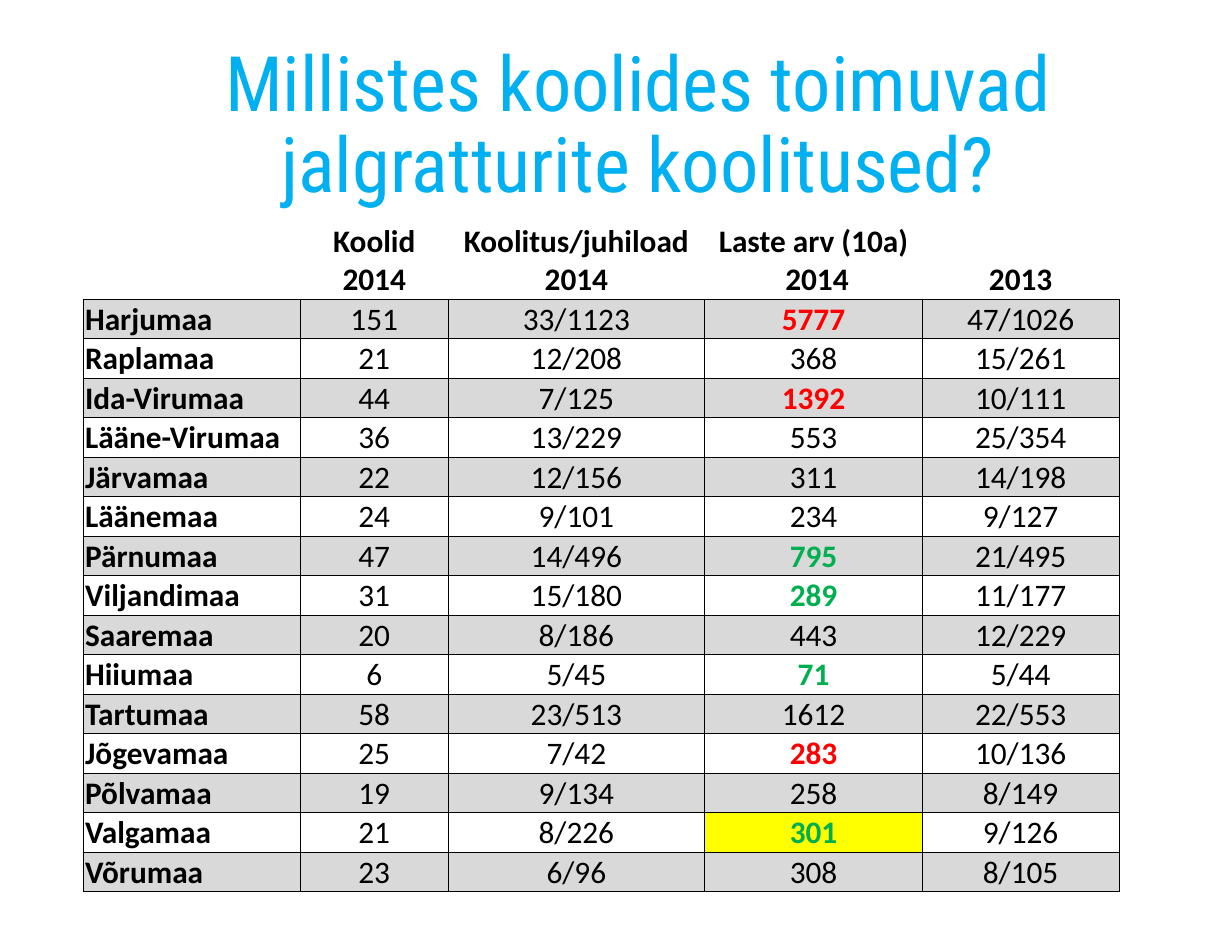
from lxml.etree import SubElement
from pptx import Presentation
from pptx.dml.color import RGBColor
from pptx.enum.text import MSO_ANCHOR, PP_ALIGN
from pptx.oxml.ns import qn
from pptx.util import Inches, Pt

BLUE = RGBColor(0x00, 0xB0, 0xF0)
BLACK = RGBColor(0x00, 0x00, 0x00)
WHITE = RGBColor(0xFF, 0xFF, 0xFF)
GREY = RGBColor(0xD9, 0xD9, 0xD9)
RED = RGBColor(0xFF, 0x00, 0x00)
GREEN = RGBColor(0x00, 0xB0, 0x50)
YELLOW = RGBColor(0xFF, 0xFF, 0x00)

# The page is 25 by 19 cm
PAGE_W, PAGE_H = 25 / 2.54, 19 / 2.54

TITLE = "Millistes koolides toimuvad jalgratturite koolitused?"
HEADS = ["", "Koolid 2014", "Koolitus/juhiload 2014", "Laste arv (10a)\n 2014", "2013"]
ROWS = [
    ("Harjumaa", "151", "33/1123", "5777", "47/1026"),
    ("Raplamaa", "21", "12/208", "368", "15/261"),
    ("Ida-Virumaa", "44", "7/125", "1392", "10/111"),
    ("Lääne-Virumaa", "36", "13/229", "553", "25/354"),
    ("Järvamaa", "22", "12/156", "311", "14/198"),
    ("Läänemaa", "24", "9/101", "234", "9/127"),
    ("Pärnumaa", "47", "14/496", "795", "21/495"),
    ("Viljandimaa", "31", "15/180", "289", "11/177"),
    ("Saaremaa", "20", "8/186", "443", "12/229"),
    ("Hiiumaa", "6", "5/45", "71", "5/44"),
    ("Tartumaa", "58", "23/513", "1612", "22/553"),
    ("Jõgevamaa", "25", "7/42", "283", "10/136"),
    ("Põlvamaa", "19", "9/134", "258", "8/149"),
    ("Valgamaa", "21", "8/226", "301", "9/126"),
    ("Võrumaa", "23", "6/96", "308", "8/105"),
]
WIDTHS = [1.73, 1.18, 2.05, 1.74, 1.57]
HEAD_H, BODY_H = 0.62, 4.74
ROW_H = BODY_H / len(ROWS)
KIDS = 3  # column with the number of children
MARKS = {
    "Harjumaa": RED, "Ida-Virumaa": RED, "Jõgevamaa": RED,
    "Pärnumaa": GREEN, "Viljandimaa": GREEN, "Hiiumaa": GREEN, "Valgamaa": GREEN,
}


def set_all(obj, values):
    for name, value in values.items():
        setattr(obj, name, value)


def style_text(frame, align, color, **font):
    for para in frame.paragraphs:
        para.alignment = align
        for run in para.runs:
            set_all(run.font, font)
            run.font.color.rgb = color


def add_title(slide):
    box = slide.shapes.add_textbox(Inches(0.55), Inches(0.33), Inches(9.1), Inches(1.38))
    frame = box.text_frame
    set_all(frame, {
        "text": TITLE, "word_wrap": True, "vertical_anchor": MSO_ANCHOR.MIDDLE,
        "margin_left": 0, "margin_right": 0, "margin_top": 0, "margin_bottom": 0,
    })
    style_text(frame, PP_ALIGN.CENTER, BLUE, name="Roboto Condensed", size=Pt(44))
    frame.paragraphs[0].line_spacing = 0.88


def set_edges(cell, shown):
    props = cell._tc.get_or_add_tcPr()
    for pos, side in enumerate("LRTB"):
        line = props.makeelement(qn(f"a:ln{side}"), {"w": str(Pt(0.5))})
        props.insert(pos, line)
        if side in shown:
            fill = SubElement(line, qn("a:solidFill"))
            SubElement(fill, qn("a:srgbClr"), val=str(BLACK))
        else:
            SubElement(line, qn("a:noFill"))


def fill_cell(cell, text, back, color, bold, align, edges):
    set_all(cell, {
        "text": text, "vertical_anchor": MSO_ANCHOR.BOTTOM,
        "margin_left": Inches(0.01), "margin_right": Inches(0.01),
        "margin_top": Inches(0.01), "margin_bottom": 0,
    })
    style_text(cell.text_frame, align, color, name="Calibri", size=Pt(18), bold=bold)
    if back is None:
        cell.fill.background()
    else:
        cell.fill.solid()
        cell.fill.fore_color.rgb = back
    set_edges(cell, edges)


def add_grid(slide):
    table = slide.shapes.add_table(
        len(ROWS) + 1, len(HEADS), Inches(0.67), Inches(1.77),
        Inches(sum(WIDTHS)), Inches(HEAD_H + BODY_H)).table
    set_all(table, {"first_row": False, "horz_banding": False})
    for col, width in zip(table.columns, WIDTHS):
        col.width = Inches(width)
    for num, row in enumerate(table.rows):
        row.height = Inches(ROW_H if num else HEAD_H)

    # Column heads
    for col, text in enumerate(HEADS):
        fill_cell(table.cell(0, col), text, None, BLACK, True, PP_ALIGN.CENTER, "B")

    # Counties, shaded on every other row
    for num, row in enumerate(ROWS, 1):
        county = row[0]
        for col, text in enumerate(row):
            mark = MARKS.get(county) if col == KIDS else None
            back = GREY if num % 2 else None
            if county == "Valgamaa" and col == KIDS:
                back = YELLOW
            align = PP_ALIGN.CENTER if col else PP_ALIGN.LEFT
            bold = col == 0 or mark is not None
            fill_cell(table.cell(num, col), text, back, mark or BLACK, bold, align, "LRTB")


def main():
    deck = Presentation()
    set_all(deck, {"slide_width": Inches(PAGE_W), "slide_height": Inches(PAGE_H)})
    slide = deck.slides.add_slide(deck.slide_layouts[6])
    # White page
    slide.background.fill.solid()
    slide.background.fill.fore_color.rgb = WHITE
    add_title(slide)
    add_grid(slide)
    deck.save("out.pptx")


if __name__ == "__main__":
    main()
